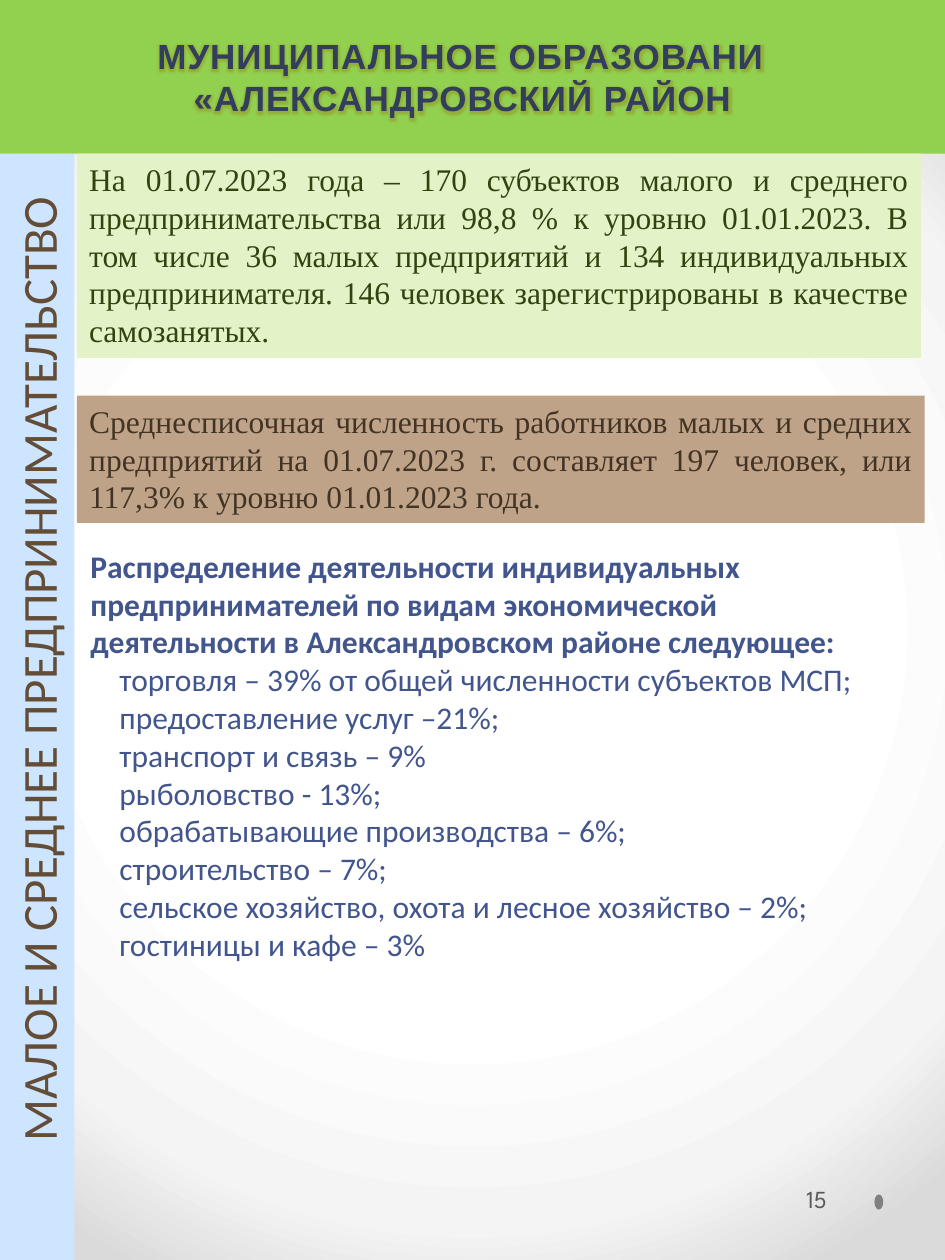
from dataclasses import dataclass

from pptx import Presentation
from pptx.dml.color import RGBColor
from pptx.enum.shapes import MSO_SHAPE
from pptx.enum.text import MSO_ANCHOR, MSO_AUTO_SIZE, PP_ALIGN
from pptx.oxml import parse_xml
from pptx.oxml.ns import nsdecls, qn
from pptx.util import Inches, Pt

RECT, OVAL = MSO_SHAPE.RECTANGLE, MSO_SHAPE.OVAL
LEFT, CENTER, JUSTIFY = PP_ALIGN.LEFT, PP_ALIGN.CENTER, PP_ALIGN.JUSTIFY
TOP, MIDDLE = MSO_ANCHOR.TOP, MSO_ANCHOR.MIDDLE
FIT, NO_FIT = MSO_AUTO_SIZE.SHAPE_TO_FIT_TEXT, MSO_AUTO_SIZE.NONE

W, H = 7.5, 10
HEADER_H = 1.22
SIDE_W = 0.59
LIST_INDENT = 0.23

COLORS = {
    "header": "92D050", "title": "2C395E", "outline": "0A290A", "glow": "966400",
    "side": "CDE5FE", "side_text": "634D36",
    "green": "E3F2C7", "green_text": "314410",
    "brown": "BEA388", "brown_text": "423324",
    "list": "42568D", "number": "595959", "dot": "808080",
}
BACKDROP = ((50, "FFFFFF"), (76, "F4F4F4"), (92, "DADADA"))


@dataclass
class Style:
    font: str
    size: float
    color: str
    bold: bool = False
    align: PP_ALIGN = LEFT


@dataclass
class Panel:
    box: tuple[float, float, float, float]
    text: str
    fill: str
    style: Style


TITLE = Style("Arial", 20, "title", True, CENTER)
SIDE = Style("Calibri", 28, "side_text", align=CENTER)
HEADING = Style("Calibri", 18, "list", True)
ITEM = Style("Calibri", 18, "list")
NUMBER = Style("League Spartan", 14, "number")

PANELS = (
    Panel((0.61, HEADER_H, 6.7, 1.62),
          "На 01.07.2023 года – 170 субъектов малого и среднего предпринимательства "
          "или 98,8 % к уровню 01.01.2023. В том числе 36 малых предприятий и "
          "134 индивидуальных предпринимателя. 146 человек зарегистрированы "
          "в качестве самозанятых.",
          "green", Style("Times New Roman", 18, "green_text", align=JUSTIFY)),
    Panel((0.61, 3.14, 6.73, 1.01),
          "Среднесписочная численность работников малых и средних предприятий "
          "на 01.07.2023 г. составляет 197 человек, или 117,3% к уровню "
          "01.01.2023 года.",
          "brown", Style("Times New Roman", 18, "brown_text", align=JUSTIFY)),
)
LIST_HEADING = ("Распределение деятельности индивидуальных предпринимателей по видам "
                "экономической деятельности в Александровском районе следующее:")
ACTIVITIES = (
    "торговля – 39% от общей численности субъектов МСП;",
    "предоставление услуг –21%;",
    "транспорт и связь – 9%",
    "рыболовство - 13%;",
    "обрабатывающие производства – 6%;",
    "строительство – 7%;",
    "сельское хозяйство, охота и лесное хозяйство – 2%;",
    "гостиницы и кафе – 3%",
)


def rgb(name: str) -> RGBColor:
    return RGBColor.from_string(COLORS[name])


def paint(sp, color: str) -> None:
    sp.fill.solid()
    sp.fill.fore_color.rgb = rgb(color)
    sp.line.fill.background()


def add_box(slide, box: tuple, fill: str, kind=RECT):
    sp = slide.shapes.add_shape(kind, *map(Inches, box))
    sp.shadow.inherit = False
    paint(sp, fill)
    return sp


def write(sp, lines: list[tuple[str, Style]], **frame) -> None:
    """Fill a shape with styled paragraphs; frame holds text frame attributes."""
    tf = sp.text_frame
    for name, value in ({"word_wrap": True, "vertical_anchor": TOP} | frame).items():
        setattr(tf, name, value)
    for i, (text, style) in enumerate(lines):
        p = tf.add_paragraph() if i else tf.paragraphs[0]
        p.alignment = style.align
        if style is ITEM:
            p._p.get_or_add_pPr().set("marL", str(Inches(LIST_INDENT)))
        r = p.add_run()
        r.text = text
        font = {"name": style.font, "size": Pt(style.size), "bold": style.bold}
        for name, value in font.items():
            setattr(r.font, name, value)
        r.font.color.rgb = rgb(style.color)


def add_title_effects(sp) -> None:
    """Letter spacing, faint outline, slight transparency and glow."""
    for p in sp.text_frame.paragraphs:
        for r in p.runs:
            rPr = r.font._element
            rPr.set("spc", "50")
            fill = rPr.find(qn("a:solidFill"))
            fill[0].append(parse_xml(f'<a:alpha {nsdecls("a")} val="95000"/>'))
            fill.addprevious(parse_xml(
                f'<a:ln {nsdecls("a")} w="13500"><a:solidFill>'
                f'<a:srgbClr val="{COLORS["outline"]}"><a:alpha val="6000"/></a:srgbClr>'
                '</a:solidFill><a:prstDash val="solid"/></a:ln>'))
            fill.addnext(parse_xml(
                f'<a:effectLst {nsdecls("a")}><a:glow rad="53100">'
                f'<a:srgbClr val="{COLORS["glow"]}"><a:alpha val="30000"/></a:srgbClr>'
                '</a:glow></a:effectLst>'))


def set_backdrop(slide) -> None:
    slide.background.fill.gradient()
    grad = next(slide.element.iter(qn("a:gradFill")))
    stops = "".join(f'<a:gs pos="{pos * 1000}"><a:srgbClr val="{color}"/></a:gs>'
                    for pos, color in BACKDROP)
    grad.getparent().replace(grad, parse_xml(
        f'<a:gradFill {nsdecls("a")} rotWithShape="1"><a:gsLst>{stops}</a:gsLst>'
        '<a:path path="circle"><a:fillToRect l="50000" t="50000" r="50000" b="50000"/>'
        '</a:path></a:gradFill>'))


def main() -> None:
    prs = Presentation()
    prs.slide_width, prs.slide_height = Inches(W), Inches(H)
    slide = prs.slides.add_slide(prs.slide_layouts[5])
    set_backdrop(slide)

    title = slide.shapes.title
    title.left, title.top, title.width, title.height = map(Inches, (0, 0, W, HEADER_H))
    paint(title, "header")
    write(title, [("МУНИЦИПАЛЬНОЕ ОБРАЗОВАНИЕ", TITLE), ("«АЛЕКСАНДРОВСКИЙ РАЙОН»", TITLE)],
          vertical_anchor=MIDDLE, auto_size=NO_FIT)
    add_title_effects(title)

    add_box(slide, (6.94, 9.48, 0.07, 0.12), "dot", OVAL)

    side_len = H - HEADER_H
    side = add_box(slide, ((SIDE_W - side_len) / 2, HEADER_H + (side_len - SIDE_W) / 2,
                           side_len, SIDE_W), "side")
    side.rotation = 270
    write(side, [("МАЛОЕ И СРЕДНЕЕ ПРЕДПРИНИМАТЕЛЬСТВО", SIDE)],
          vertical_anchor=MIDDLE, margin_left=Inches(0.7))

    for panel in PANELS:
        write(add_box(slide, panel.box, panel.fill), [(panel.text, panel.style)],
              auto_size=FIT)

    number = slide.shapes.add_textbox(*map(Inches, (6.37, 9.25, 0.95, 0.53)))
    write(number, [("15", NUMBER)], vertical_anchor=MIDDLE,
          margin_left=Inches(0.03), margin_right=Inches(0.05))

    activities = slide.shapes.add_textbox(*map(Inches, (0.62, 4.29, 6.7, 3.43)))
    write(activities, [(LIST_HEADING, HEADING)] + [(text, ITEM) for text in ACTIVITIES],
          auto_size=FIT)

    prs.save("out.pptx")


if __name__ == "__main__":
    main()
